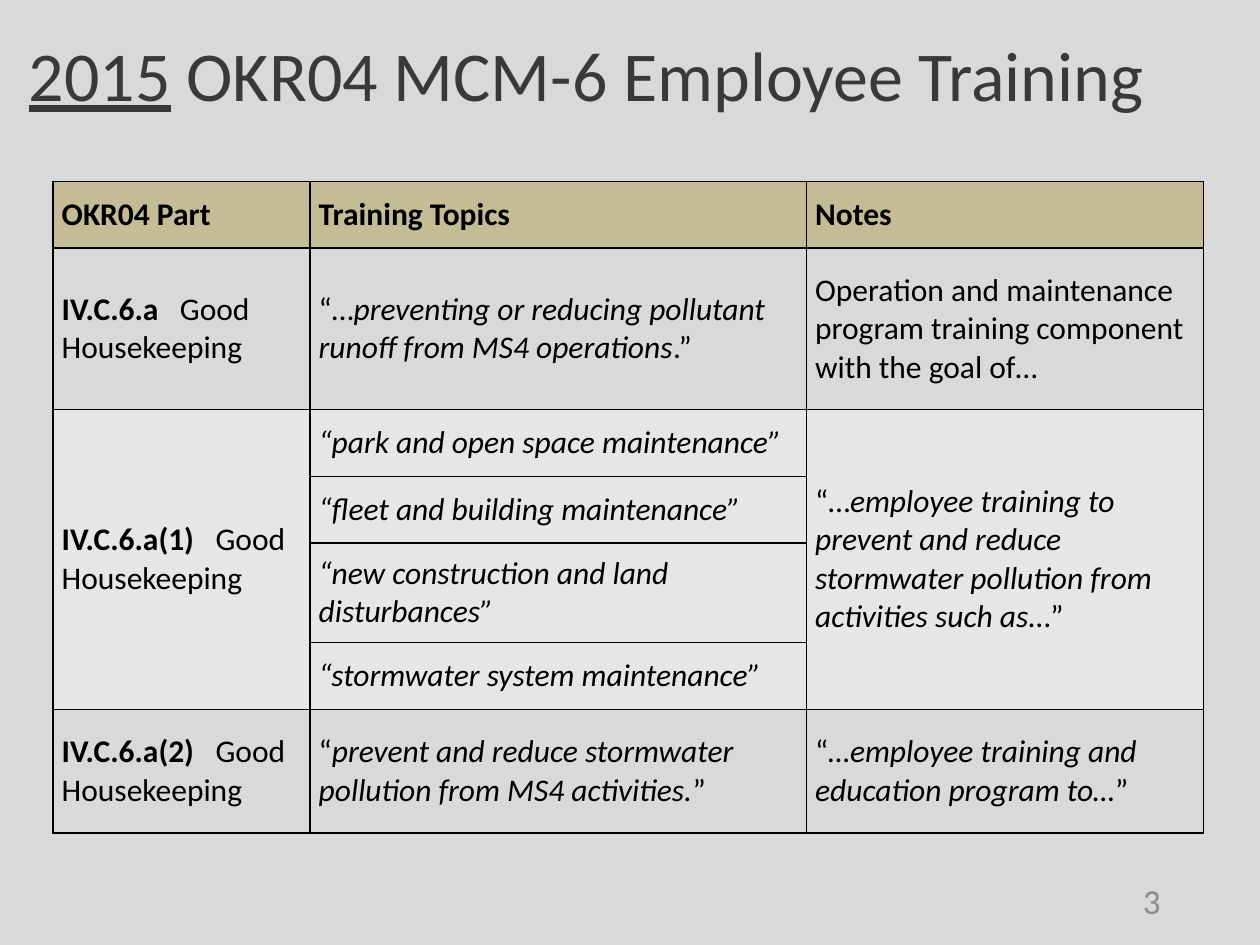
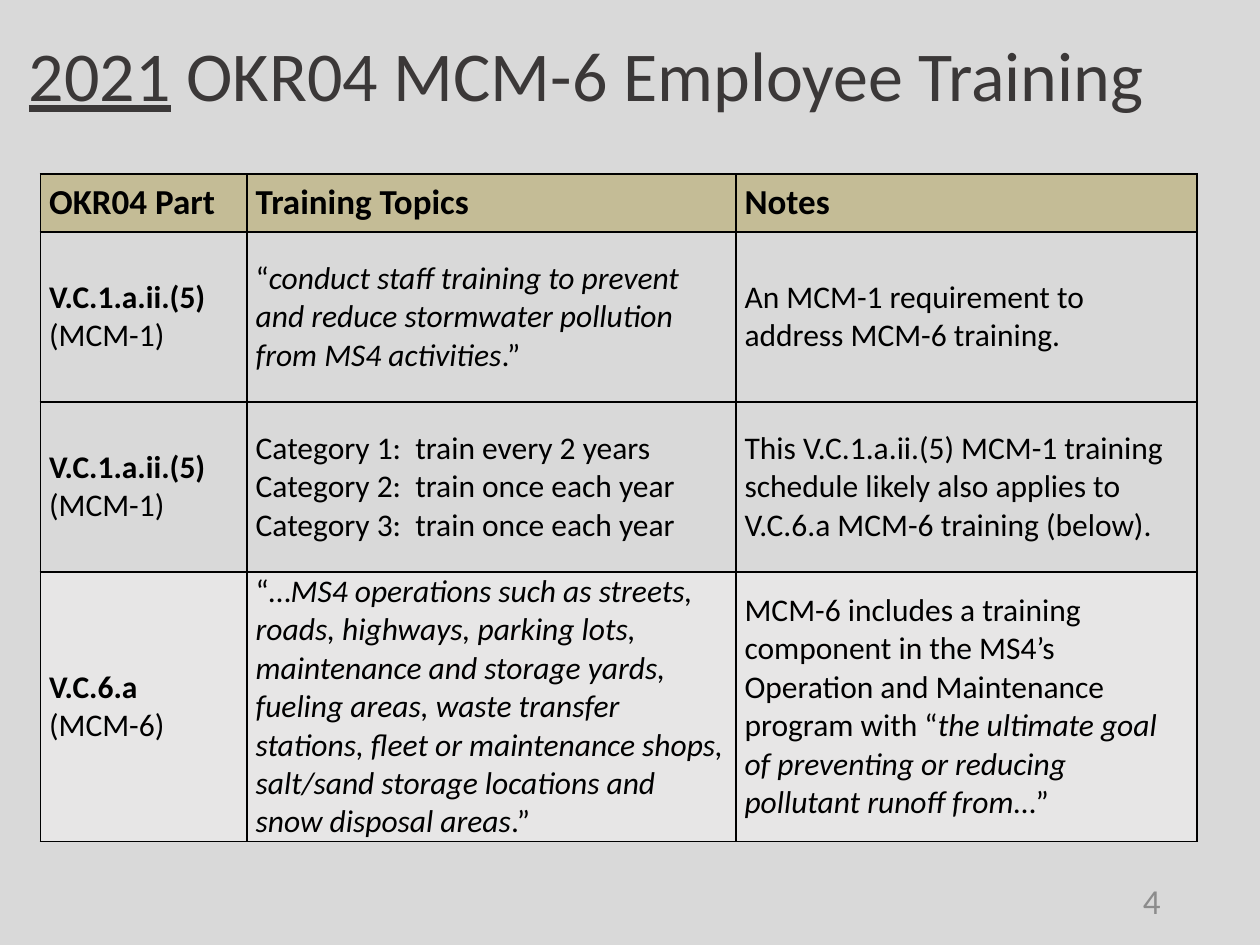
"""Build two slides of tables comparing employee training rules of 2015 and 2021."""
from lxml.etree import SubElement
from pptx import Presentation
from pptx.dml.color import RGBColor
from pptx.enum.text import MSO_ANCHOR, MSO_AUTO_SIZE, PP_ALIGN
from pptx.oxml.ns import qn
from pptx.util import Inches, Pt

COLOURS = {
    "background": "D9D9D9",
    "title": "3B3838",
    "number": "8C8C8C",
    "text": "000000",
    "border": "000000",
    "header": "C4BC96",
    "highlight": "E7E6E6",
}
HEADINGS = ["OKR04 Part", "Training Topics", "Notes"]
CELL_FORMAT = {
    "vertical_anchor": MSO_ANCHOR.MIDDLE,
    "margin_left": Inches(0.07),
    "margin_right": Inches(0.07),
    "margin_top": 0,
    "margin_bottom": 0,
}
FRAME_FORMAT = {
    "word_wrap": True,
    "auto_size": MSO_AUTO_SIZE.NONE,
    "vertical_anchor": MSO_ANCHOR.MIDDLE,
}
SLIDES = [
    {
        "year": "2015",
        "number": "3",
        "position": (0.42, 1.44),
        "columns": [2.04, 3.94, 3.15],
        "heights": [0.53, 1.28, 0.53, 0.53, 0.79, 0.53, 0.98],
        "header_size": 18,
        "highlighted": range(2, 6),
        "merges": [(2, 0, 5, 0), (2, 2, 5, 2)],
        "rows": [
            ["*IV.C.6.a*   Good Housekeeping",
             "“…_preventing or reducing pollutant runoff from MS4 operations_.”",
             "Operation and maintenance program training component with the goal of…"],
            ["*IV.C.6.a(1)   *Good Housekeeping",
             "_“park and open space maintenance”_",
             "“…_employee training to prevent and reduce stormwater pollution "
             "from activities such as_…”"],
            ["", "_“fleet and building maintenance”_", ""],
            ["", "_“new construction and land disturbances”_", ""],
            ["", "_“stormwater system maintenance”_", ""],
            ["*IV.C.6.a(2)   *Good Housekeeping",
             "“_prevent and reduce stormwater pollution from MS4 activities._”",
             "“_…employee training and education program to…_”"],
        ],
    },
    {
        "year": "2021",
        "number": "4",
        "position": (0.32, 1.38),
        "columns": [1.64, 3.88, 3.66],
        "heights": [0.46, 1.35, 1.35, 2.14],
        "header_size": 20,
        "highlighted": [3],
        "merges": [],
        "rows": [
            ["*V.C.1.a.ii.(5)*\n(MCM-1)",
             "“_conduct staff training to prevent and reduce stormwater pollution "
             "from MS4 activities_.”",
             "An MCM-1 requirement to address MCM-6 training."],
            ["*V.C.1.a.ii.(5)*\n(MCM-1)",
             "Category 1:  train every 2 years\nCategory 2:  train once each year\n"
             "Category 3:  train once each year",
             "This V.C.1.a.ii.(5) MCM-1 training schedule likely also applies to "
             "V.C.6.a MCM-6 training (below)."],
            ["*V.C.6.a*\n(MCM-6)",
             "“…_MS4 operations such as streets, roads, highways, parking lots, "
             "maintenance and storage yards, fueling areas, waste transfer stations, "
             "fleet or maintenance shops, salt/sand storage locations and snow "
             "disposal areas_.”",
             "MCM-6 includes a training component in the MS4’s Operation and "
             "Maintenance program with “_the ultimate goal of preventing or reducing "
             "pollutant runoff from_…”"],
        ],
    },
]


def add_run(paragraph, text, size, colour, **styles):
    """Append a run in the shared font with the given styles."""
    run = paragraph.add_run()
    run.text = text
    run.font.color.rgb = RGBColor.from_string(COLOURS[colour])
    values = {"name": "Calibri", "size": Pt(size), **styles}
    for name, value in values.items():
        setattr(run.font, name, value)


def fill_cell(cell, text, size, fill):
    """Write text where * marks bold and _ marks italic, then border and fill the cell."""
    for name, value in CELL_FORMAT.items():
        setattr(cell, name, value)
    for index, line in enumerate(text.split("\n")):
        frame = cell.text_frame
        paragraph = frame.add_paragraph() if index else frame.paragraphs[0]
        for bold, part in enumerate(line.split("*")):
            for italic, piece in enumerate(part.split("_")):
                if piece:
                    add_run(paragraph, piece, size, "text",
                            bold=bold % 2 == 1, italic=italic % 2 == 1)
    properties = cell._tc.get_or_add_tcPr()
    for side in ("a:lnL", "a:lnR", "a:lnT", "a:lnB"):
        line = SubElement(properties, qn(side), w=str(Pt(1)))
        solid = SubElement(line, qn("a:solidFill"))
        SubElement(solid, qn("a:srgbClr"), val=COLOURS["border"])
    if fill:
        cell.fill.solid()
        cell.fill.fore_color.rgb = RGBColor.from_string(COLOURS[fill])
    else:
        cell.fill.background()


presentation = Presentation()
presentation.slide_width = Inches(10)
presentation.slide_height = Inches(7.5)
title_only = presentation.slide_layouts[5]
background = presentation.slide_master.background.fill
background.solid()
background.fore_color.rgb = RGBColor.from_string(COLOURS["background"])

for content in SLIDES:
    slide = presentation.slides.add_slide(title_only)
    title = slide.shapes.title
    title.left, title.top, title.width, title.height = map(Inches, (0.13, 0.17, 9.77, 0.83))
    number = slide.shapes.add_textbox(*map(Inches, (7.06, 6.95, 2.25, 0.4)))
    for shape, alignment in ((title, PP_ALIGN.LEFT), (number, PP_ALIGN.RIGHT)):
        for name, value in FRAME_FORMAT.items():
            setattr(shape.text_frame, name, value)
        shape.text_frame.paragraphs[0].alignment = alignment
    heading = title.text_frame.paragraphs[0]
    add_run(heading, content["year"], 40, "title", underline=True)
    add_run(heading, " OKR04 MCM-6 Employee Training", 40, "title", underline=False)
    add_run(number.text_frame.paragraphs[0], content["number"], 20, "number")

    columns, heights = content["columns"], content["heights"]
    frame = slide.shapes.add_table(
        len(heights), len(columns), *map(Inches, content["position"]),
        Inches(sum(columns)), Inches(sum(heights)))
    table = frame.table
    table.first_row = table.horz_banding = False
    for column, width in zip(table.columns, columns):
        column.width = Inches(width)
    for row, height in zip(table.rows, heights):
        row.height = Inches(height)
    headings = [f"*{label}*" for label in HEADINGS]
    for row_index, texts in enumerate([headings] + content["rows"]):
        size = 18 if row_index else content["header_size"]
        fill = "highlight" if row_index in content["highlighted"] else None
        for column_index, text in enumerate(texts):
            fill_cell(table.cell(row_index, column_index), text, size,
                      fill if row_index else "header")
    for top, left, bottom, right in content["merges"]:
        table.cell(top, left).merge(table.cell(bottom, right))

presentation.save("out.pptx")
